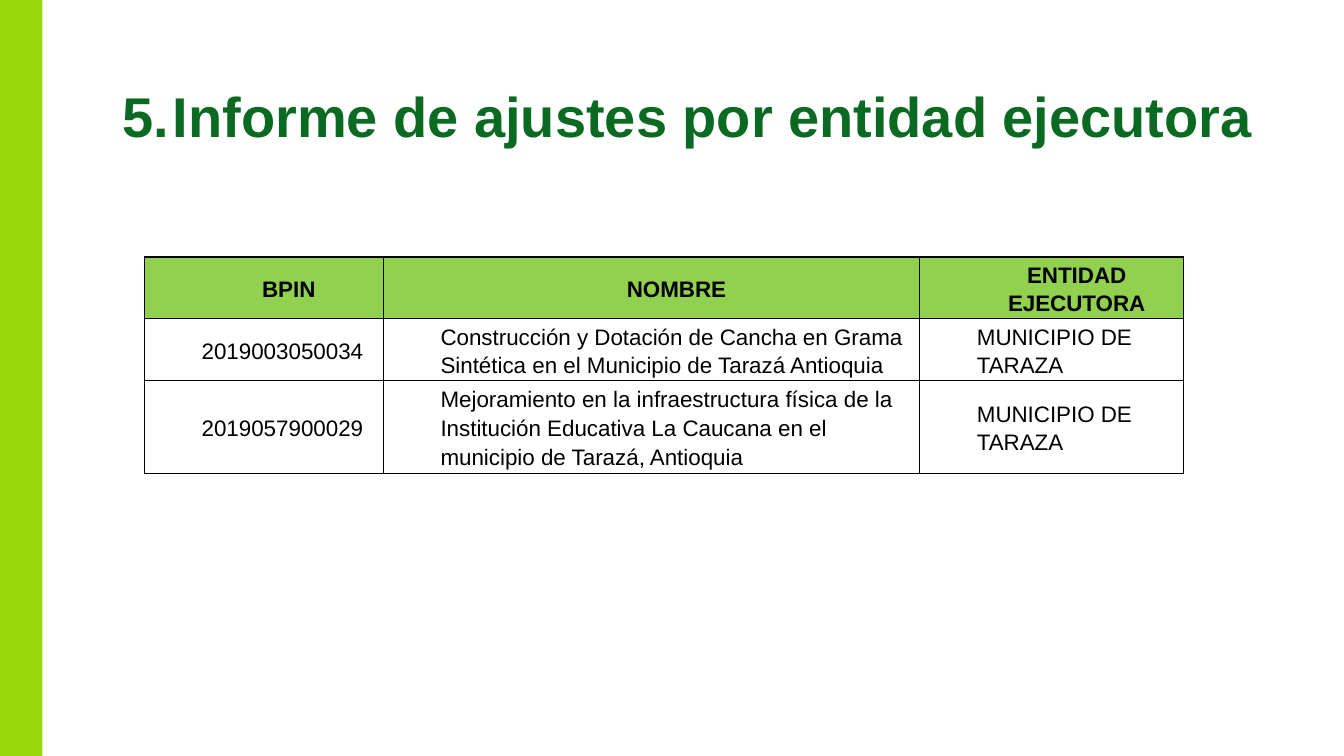
from pptx import Presentation
from pptx.dml.color import RGBColor
from pptx.enum.shapes import MSO_SHAPE
from pptx.enum.text import MSO_ANCHOR, MSO_AUTO_SIZE, PP_ALIGN
from pptx.oxml import parse_xml
from pptx.oxml.ns import nsdecls
from pptx.util import Inches, Pt

LIME = RGBColor(0x99, 0xD8, 0x0D)
HEADER_GREEN = RGBColor(0x92, 0xD0, 0x50)
TITLE_GREEN = RGBColor(0x0A, 0x6A, 0x21)
BLACK = RGBColor(0, 0, 0)


def style(p, size, color, bold):
    font = p.runs[0].font
    font.name = "Arial"
    font.size = Pt(size)
    font.bold = bold
    font.color.rgb = color


def add_borders(cell):
    for side in ("lnL", "lnR", "lnT", "lnB"):
        cell._tc.get_or_add_tcPr().append(parse_xml(
            f'<a:{side} {nsdecls("a")} w="12700"><a:solidFill>'
            f'<a:srgbClr val="{BLACK}"/></a:solidFill></a:{side}>'))


prs = Presentation()
prs.slide_width = Inches(13.33)
prs.slide_height = Inches(7.5)
s = prs.slides.add_slide(prs.slide_layouts[6])

# Title
tf = s.shapes.add_textbox(Inches(0.88), Inches(0.76), Inches(11.87), Inches(0.77)).text_frame
tf.word_wrap = True
tf.auto_size = MSO_AUTO_SIZE.SHAPE_TO_FIT_TEXT
p = tf.paragraphs[0]
p.text = "5.\tInforme de ajustes por entidad ejecutora"
p.alignment = PP_ALIGN.CENTER
style(p, 40, TITLE_GREEN, True)

# Left band
sp = s.shapes.add_shape(MSO_SHAPE.RECTANGLE, 0, 0, Inches(0.42), prs.slide_height)
sp.shadow.inherit = False
sp.fill.solid()
sp.fill.fore_color.rgb = LIME
sp.line.fill.background()

# Project table
rows = [
    ("BPIN", "NOMBRE", "ENTIDAD EJECUTORA"),
    ("2019003050034",
     "Construcción y Dotación de Cancha en Grama Sintética en el Municipio de Tarazá Antioquia",
     "MUNICIPIO DE TARAZA"),
    ("2019057900029",
     "Mejoramiento en la infraestructura física de la Institución Educativa La Caucana "
     "en el municipio de Tarazá, Antioquia",
     "MUNICIPIO DE TARAZA"),
]
table = s.shapes.add_table(3, 3, Inches(1.43), Inches(2.55), Inches(10.31), Inches(2.14)).table
for column, width in zip(table.columns, (2.37, 5.32, 2.62)):
    column.width = Inches(width)
for row, height in zip(table.rows, (0.61, 0.61, 0.92)):
    row.height = Inches(height)

for i, texts in enumerate(rows):
    header = i == 0
    for j, text in enumerate(texts):
        cell = table.cell(i, j)
        cell.vertical_anchor = MSO_ANCHOR.MIDDLE
        cell.margin_left = cell.margin_right = Inches(0.07)
        cell.margin_top = cell.margin_bottom = 0
        add_borders(cell)
        if header:
            cell.fill.solid()
            cell.fill.fore_color.rgb = HEADER_GREEN
        else:
            cell.fill.background()
        p = cell.text_frame.paragraphs[0]
        p.text = text
        p.alignment = PP_ALIGN.CENTER if header else PP_ALIGN.LEFT
        p.line_spacing = 1.15
        if j == 2:
            p.space_after = Pt(10)
        pPr = p._p.get_or_add_pPr()
        pPr.set("marL", str(Inches(0.5)))
        pPr.set("indent", "0")
        style(p, 16, BLACK, header)

prs.save("out.pptx")
